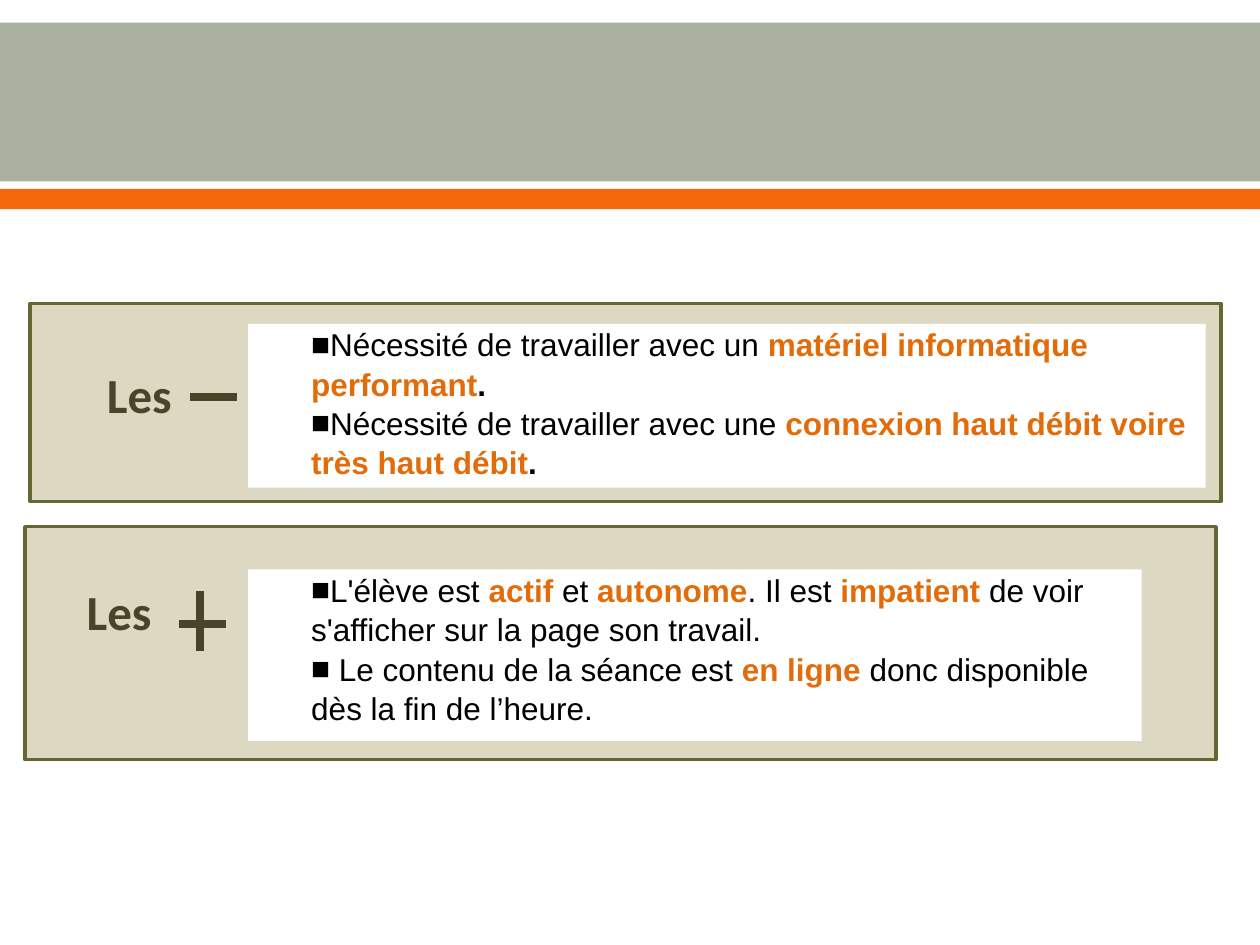
from typing import NamedTuple

from lxml.etree import SubElement
from pptx import Presentation
from pptx.dml.color import RGBColor
from pptx.enum.shapes import MSO_CONNECTOR, MSO_SHAPE
from pptx.enum.text import MSO_ANCHOR, PP_ALIGN
from pptx.oxml.ns import qn
from pptx.util import Inches, Pt

SAGE = RGBColor(0xAB, 0xB1, 0x9F)
ORANGE = RGBColor(0xF4, 0x68, 0x0B)
SAND = RGBColor(0xDD, 0xD8, 0xC2)
OLIVE = RGBColor(0x66, 0x66, 0x33)
BROWN = RGBColor(0x4A, 0x44, 0x2A)
SIGN_BROWN = RGBColor(0x48, 0x43, 0x29)
ACCENT = RGBColor(0xE3, 0x6C, 0x0A)
BLACK = RGBColor(0, 0, 0)
WHITE = RGBColor(0xFF, 0xFF, 0xFF)

# The page is a grid of 10 columns by 7.5 rows with square cells.
COLUMNS, ROWS = 10, 7.5
CELL = Inches(1)


class Area(NamedTuple):
    column: float
    row: float
    columns: float
    rows: float

    def lengths(self) -> list[int]:
        return [round(value * CELL) for value in self]


class Stroke(NamedTuple):
    column: float
    row: float
    end_column: float
    end_row: float


class Span(NamedTuple):
    text: str
    color: RGBColor = BLACK
    bold: bool = False


class Panel(NamedTuple):
    frame: Area
    label: Area
    sign: list[Stroke]
    card: Area
    points: list[list[Span]]


def key(text: str) -> Span:
    return Span(text, ACCENT, True)


BANDS = [(Area(0, 0.18, COLUMNS, 1.26), SAGE), (Area(0, 1.5, COLUMNS, 0.16), ORANGE)]

PANELS = [
    Panel(
        frame=Area(0.24, 2.41, 9.45, 1.57),
        label=Area(0.75, 2.84, 1.03, 1.17),
        sign=[Stroke(1.51, 3.15, 1.88, 3.15)],
        card=Area(1.97, 2.57, 7.6, 1.3),
        points=[
            [Span("Nécessité de travailler avec un "),
             key("matériel informatique performant"), Span(".", bold=True)],
            [Span("Nécessité de travailler avec une "),
             key("connexion haut débit voire très haut débit"), Span(".", bold=True)],
        ],
    ),
    Panel(
        frame=Area(0.2, 4.18, 9.45, 1.85),
        label=Area(0.59, 4.57, 1.03, 1.37),
        sign=[Stroke(1.59, 4.69, 1.59, 5.17), Stroke(1.42, 4.95, 1.79, 4.95)],
        card=Area(1.97, 4.52, 7.09, 1.36),
        points=[
            [Span("L'élève est "), key("actif"), Span(" et "), key("autonome"),
             Span(". Il est "), key("impatient "),
             Span("de voir s'afficher sur la page son travail.")],
            [Span(" Le contenu de la séance est "), key("en ligne "),
             Span("donc disponible dès la fin de l’heure.")],
        ],
    ),
]


def add_rectangle(shapes, area: Area, fill: RGBColor, line: RGBColor | None = None):
    box = shapes.add_shape(MSO_SHAPE.RECTANGLE, *area.lengths())
    box.shadow.inherit = False
    box.fill.solid()
    box.fill.fore_color.rgb = fill
    if line is None:
        box.line.fill.background()
    else:
        box.line.color.rgb = line
        box.line.width = Pt(2)
    return box


def add_label(shapes, area: Area) -> None:
    frame = shapes.add_textbox(*area.lengths()).text_frame
    frame.word_wrap = True
    frame.text = "Les"
    para = frame.paragraphs[0]
    para.space_after = Pt(10)
    font = para.runs[0].font
    font.name, font.size, font.bold = "Calibri", Pt(28), True
    font.color.rgb = BROWN


def add_stroke(shapes, stroke: Stroke) -> None:
    line = shapes.add_connector(
        MSO_CONNECTOR.STRAIGHT, *[round(value * CELL) for value in stroke])
    line.line.color.rgb = SIGN_BROWN
    line.line.width = Pt(4.5)
    SubElement(line._element.spPr, qn("a:effectLst"))


def add_bullet(para) -> None:
    """Put a square bullet directly before the text, with no hanging indent."""
    properties = para._p.get_or_add_pPr()
    properties.set("marL", str(Inches(0.5)))
    properties.set("indent", "0")
    SubElement(properties, qn("a:buFont")).set("typeface", "Arial")
    SubElement(properties, qn("a:buChar")).set("char", "■")


def add_card(shapes, area: Area, points: list[list[Span]]) -> None:
    frame = add_rectangle(shapes, area, WHITE).text_frame
    frame.word_wrap = True
    frame.vertical_anchor = MSO_ANCHOR.TOP
    frame.margin_left = frame.margin_right = frame.margin_top = frame.margin_bottom = 0
    for index, spans in enumerate(points):
        para = frame.add_paragraph() if index else frame.paragraphs[0]
        para.level = 1
        para.alignment = PP_ALIGN.LEFT
        para.line_spacing = 1.04
        add_bullet(para)
        for span in spans:
            run = para.add_run()
            run.text = span.text
            run.font.name, run.font.size, run.font.bold = "Arial", Pt(18), span.bold
            run.font.color.rgb = span.color


def add_panel(page, panel: Panel) -> None:
    shapes = page.shapes.add_group_shape().shapes
    add_rectangle(shapes, panel.frame, SAND, OLIVE)
    add_label(shapes, panel.label)
    for stroke in panel.sign:
        add_stroke(shapes, stroke)
    add_card(shapes, panel.card, panel.points)


def main() -> None:
    deck = Presentation()
    deck.slide_width, deck.slide_height = round(COLUMNS * CELL), round(ROWS * CELL)
    page = deck.slides.add_slide(deck.slide_layouts[6])
    for area, color in BANDS:
        add_rectangle(page.shapes, area, color)
    for panel in PANELS:
        add_panel(page, panel)
    deck.save("out.pptx")


if __name__ == "__main__":
    main()
